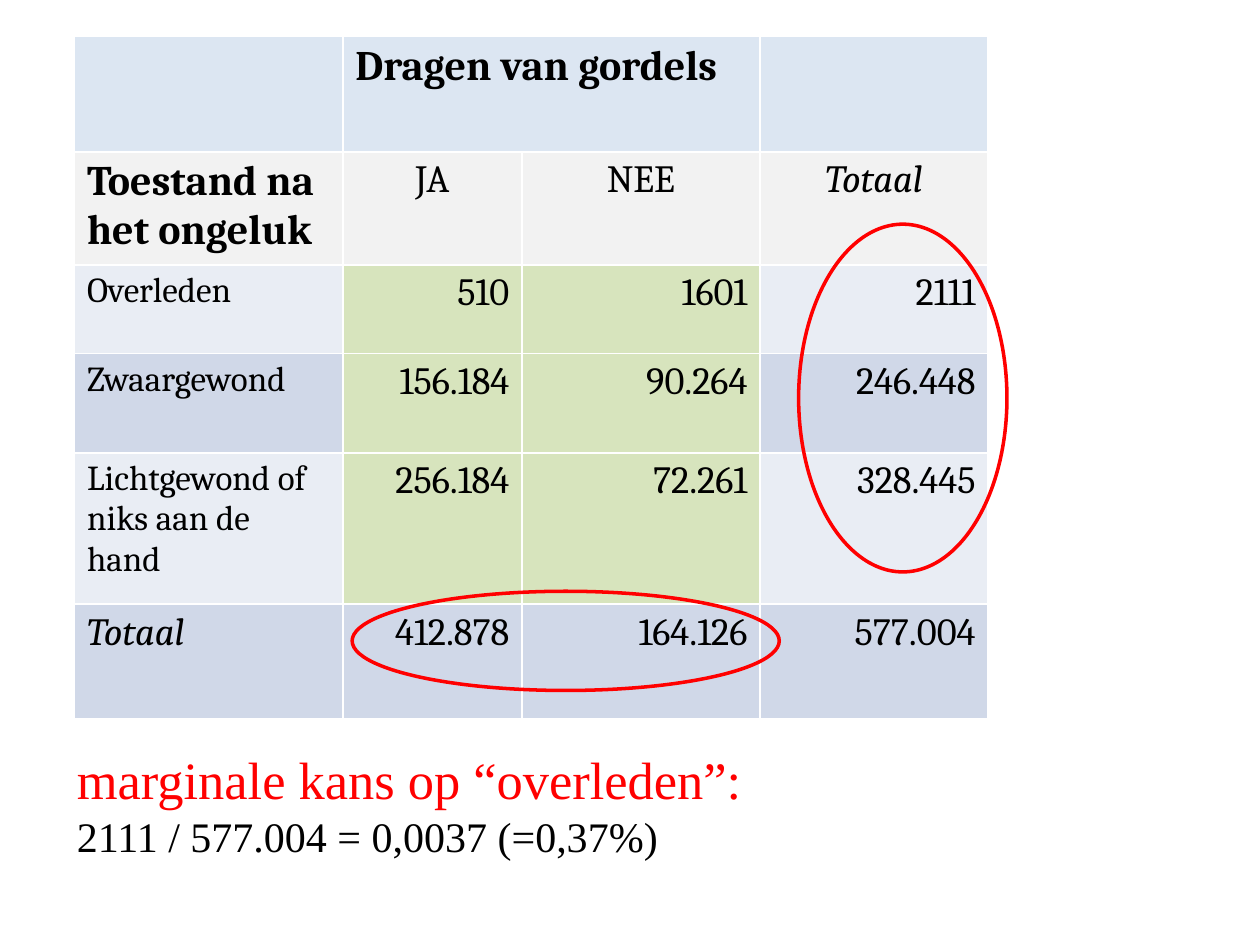
from pptx import Presentation
from pptx.dml.color import RGBColor
from pptx.enum.shapes import MSO_SHAPE
from pptx.enum.text import MSO_AUTO_SIZE, PP_ALIGN as Align
from pptx.util import Cm, Pt

BLACK = RGBColor(0x00, 0x00, 0x00)
RED = RGBColor(0xFF, 0x00, 0x00)
HEADER_BLUE = RGBColor(0xDC, 0xE6, 0xF2)
HEADER_GREY = RGBColor(0xF2, 0xF2, 0xF2)
LIGHT_BAND = RGBColor(0xE9, 0xED, 0xF4)
DARK_BAND = RGBColor(0xD0, 0xD8, 0xE8)
GREEN = RGBColor(0xD7, 0xE4, 0xBD)

COLUMN_WIDTHS = (5.41, 3.61, 4.8, 4.6)
ROW_HEIGHTS = (2.32, 2.28, 1.79, 2, 3.05, 2.32)
ROWS = (
    ("", "Dragen van gordels", "", ""),
    ("Toestand na het ongeluk", "JA", "NEE", "Totaal"),
    ("Overleden", "510", "1601", "2111"),
    ("Zwaargewond", "156.184", "90.264", "246.448"),
    ("Lichtgewond of\nniks aan de hand", "256.184", "72.261", "328.445"),
    ("Totaal", "412.878", "164.126", "577.004"),
)
ROW_FILLS = (HEADER_BLUE, HEADER_GREY, LIGHT_BAND, DARK_BAND, LIGHT_BAND, DARK_BAND)
COUNT_ROWS = range(2, 5)
ANSWER_COLUMNS = (1, 2)


def set_font(font, color, **formats):
    font.color.rgb = color
    for name, value in formats.items():
        setattr(font, name, value)


def cell_format(row, column, text):
    """Return the alignment and font values that belong to a cell's role."""
    is_heading = row == 0 or (row, column) == (1, 0)
    if row == 0 or column == 0:
        alignment = Align.LEFT
    else:
        alignment = Align.CENTER if row == 1 else Align.RIGHT
    if is_heading:
        size = 24
    else:
        size = 20 if column == 0 and row in COUNT_ROWS else 22
    return alignment, {
        "name": "Cambria",
        "size": Pt(size),
        "bold": is_heading,
        "italic": text == "Totaal",
    }


def fill_cell(cell, row, column, text):
    is_count = row in COUNT_ROWS and column in ANSWER_COLUMNS
    cell.fill.solid()
    cell.fill.fore_color.rgb = GREEN if is_count else ROW_FILLS[row]
    if not text:
        return
    cell.text_frame.text = text
    alignment, formats = cell_format(row, column, text)
    for paragraph in cell.text_frame.paragraphs:
        paragraph.alignment = alignment
        for run in paragraph.runs:
            set_font(run.font, BLACK, **formats)


def add_seatbelt_table(slide):
    table = slide.shapes.add_table(
        len(ROWS), len(COLUMN_WIDTHS), Cm(1.5), Cm(0.74),
        Cm(sum(COLUMN_WIDTHS)), Cm(sum(ROW_HEIGHTS)),
    ).table
    for column, width in zip(table.columns, COLUMN_WIDTHS):
        column.width = Cm(width)
    for row, height in zip(table.rows, ROW_HEIGHTS):
        row.height = Cm(height)
    table.cell(0, 1).merge(table.cell(0, 2))
    for row, texts in enumerate(ROWS):
        for column, text in enumerate(texts):
            fill_cell(table.cell(row, column), row, column, text)


def add_ring(slide, left, top, width, height):
    ring = slide.shapes.add_shape(
        MSO_SHAPE.OVAL, Cm(left), Cm(top), Cm(width), Cm(height))
    ring.shadow.inherit = False
    ring.fill.background()
    ring.line.color.rgb = RED
    ring.line.width = Pt(2)


def add_marginal_probability(slide):
    box = slide.shapes.add_textbox(Cm(1.3), Cm(14.94), Cm(14.05), Cm(2.57))
    box.text_frame.word_wrap = False
    box.text_frame.auto_size = MSO_AUTO_SIZE.SHAPE_TO_FIT_TEXT
    paragraph = box.text_frame.paragraphs[0]
    heading = paragraph.add_run()
    heading.text = "marginale kans op “overleden”:"
    set_font(heading.font, RED, name="Times New Roman", size=Pt(30))
    paragraph.add_line_break()
    calculation = paragraph.add_run()
    calculation.text = "2111 / 577.004 = 0,0037 (=0,37%)"
    set_font(calculation.font, BLACK, name="Times New Roman", size=Pt(24))


def main():
    presentation = Presentation()
    presentation.slide_width = Cm(25.4)
    presentation.slide_height = Cm(19.05)
    slide = presentation.slides.add_slide(presentation.slide_layouts[6])
    add_seatbelt_table(slide)
    add_ring(slide, 7.1, 11.92, 8.61, 2)
    add_marginal_probability(slide)
    add_ring(slide, 16.1, 4.52, 4.2, 7.01)
    presentation.save("out.pptx")


if __name__ == "__main__":
    main()
